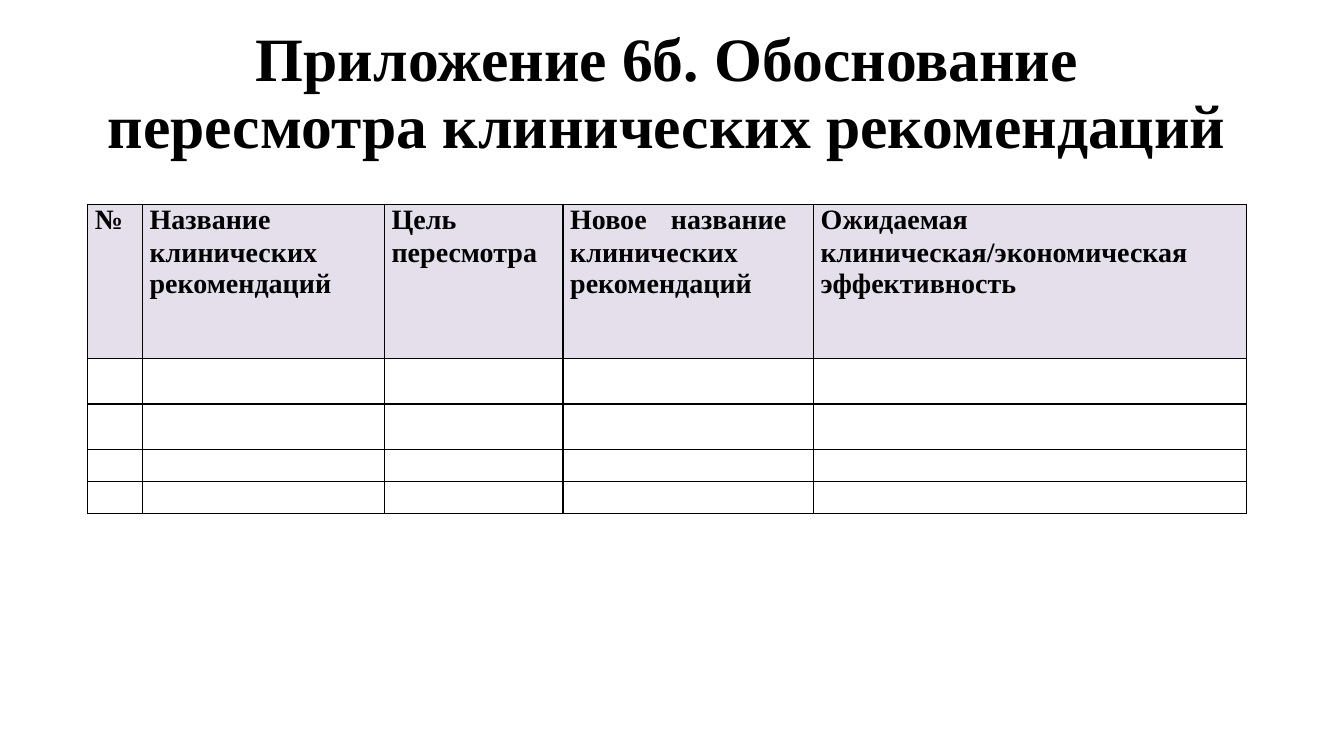
from lxml.etree import SubElement
from pptx import Presentation
from pptx.dml.color import RGBColor
from pptx.enum.text import MSO_ANCHOR, PP_ALIGN
from pptx.oxml.ns import qn
from pptx.util import Cm, Pt

BLACK = RGBColor(0x00, 0x00, 0x00)
LILAC = RGBColor(0xE5, 0xDF, 0xEC)
FONT = "Times New Roman"

HEADERS = [
    ["№"],
    ["Название", "клинических рекомендаций"],
    ["Цель", "пересмотра"],
    ["Новое\tназвание", "клинических рекомендаций"],
    ["Ожидаемая", "клиническая/экономическая эффективность"],
]
COL_WIDTHS = [Cm(w) for w in (1.38, 6.1, 4.5, 6.31, 10.92)]
ROW_HEIGHTS = [Cm(h) for h in (3.88, 1.14, 1.14, 0.81, 0.81)]
INDENT = Cm(0.18)
TAB_STOP = Cm(2.54)


def add_run(p, text, size):
    r = p.add_run()
    r.text = text
    r.font.name = FONT
    r.font.size = Pt(size)
    r.font.bold = True
    r.font.color.rgb = BLACK


def set_borders(cell):
    tcPr = cell._tc.get_or_add_tcPr()
    for i, side in enumerate(("lnL", "lnR", "lnT", "lnB")):
        ln = tcPr.makeelement(qn(f"a:{side}"), {"w": str(Pt(1))})
        fill = SubElement(ln, qn("a:solidFill"))
        SubElement(fill, qn("a:srgbClr"), val=str(BLACK))
        tcPr.insert(i, ln)  # borders come before the fill


def fill_header(cell, lines):
    cell.fill.solid()
    cell.fill.fore_color.rgb = LILAC
    tf = cell.text_frame
    for i, line in enumerate(lines):
        p = tf.add_paragraph() if i else tf.paragraphs[0]
        if i:
            p.space_before = Pt(0.8)
        pPr = p._p.get_or_add_pPr()
        pPr.set("marL", str(INDENT))
        pPr.set("indent", "0")
        if "\t" in line:
            tabs = SubElement(pPr, qn("a:tabLst"))
            SubElement(tabs, qn("a:tab"), pos=str(TAB_STOP), algn="l")
        add_run(p, line, 20)


def add_title(s, left, top, width, height):
    sp = s.shapes.title
    sp.left, sp.top, sp.width, sp.height = left, top, width, height
    tf = sp.text_frame
    tf.word_wrap = True
    tf.vertical_anchor = MSO_ANCHOR.MIDDLE
    p = tf.paragraphs[0]
    p.alignment = PP_ALIGN.CENTER
    p.line_spacing = 0.9
    add_run(p, "Приложение 6б. Обоснование пересмотра клинических рекомендаций", 44)


def add_revision_table(s, left, top, width, height):
    table = s.shapes.add_table(len(ROW_HEIGHTS), len(COL_WIDTHS),
                               left, top, width, height).table
    table.first_row = table.horz_banding = False
    for col, w in zip(table.columns, COL_WIDTHS):
        col.width = w
    for row, h in zip(table.rows, ROW_HEIGHTS):
        row.height = h
    for cell in table.iter_cells():
        cell.margin_left = cell.margin_right = 0
        cell.margin_top = cell.margin_bottom = 0
        cell.fill.background()
        set_borders(cell)
    for cell, lines in zip(table.rows[0].cells, HEADERS):
        fill_header(cell, lines)


def main():
    prs = Presentation()
    prs.slide_width, prs.slide_height = Cm(33.87), Cm(19.05)
    s = prs.slides.add_slide(prs.slide_layouts[5])
    left, width = Cm(2.21), sum(COL_WIDTHS)

    # Heading
    add_title(s, left, Cm(0.56), width, Cm(3.68))
    # Table with empty rows to fill in
    add_revision_table(s, left, Cm(5.16), width, sum(ROW_HEIGHTS))

    prs.save("out.pptx")


if __name__ == "__main__":
    main()
